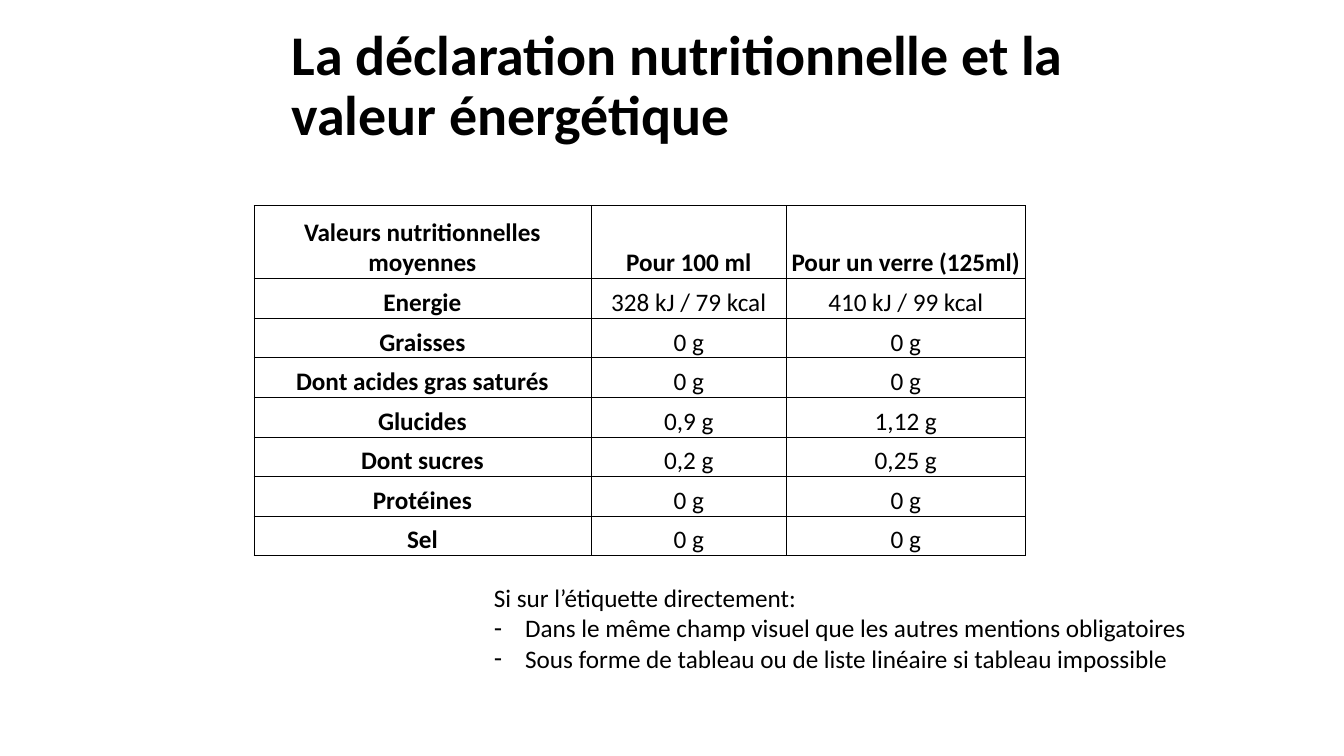
from lxml import etree
from pptx import Presentation
from pptx import util as u
from pptx.dml import color
from pptx.enum import text
from pptx.oxml import ns

INK = "000000"
FONT = "Calibri"
NUTRITION = [
    ("Valeurs nutritionnelles moyennes", "Pour 100 ml", "Pour un verre (125ml)"),
    ("Energie", "328 kJ / 79 kcal", "410 kJ / 99 kcal"),
    ("Graisses", "0 g", "0 g"),
    ("Dont acides gras saturés", "0 g", "0 g"),
    ("Glucides", "0,9 g", "1,12 g"),
    ("Dont sucres", "0,2 g", "0,25 g"),
    ("Protéines", "0 g", "0 g"),
    ("Sel", "0 g", "0 g"),
]
RULES = [
    "Dans le même champ visuel que les autres mentions obligatoires",
    "Sous forme de tableau ou de liste linéaire si tableau impossible",
]


def paint(target, code):
    """Give a colour format the colour of a hex string."""
    target.rgb = color.RGBColor.from_string(code)


def write(para, words, size, bold=False):
    """Add one formatted run to a paragraph."""
    span = para.add_run()
    span.text = words
    span.font.name = FONT
    span.font.size = u.Pt(size)
    span.font.bold = bold
    paint(span.font.color, INK)


def place(shape, box):
    """Move a shape to a box given in centimetres."""
    shape.left, shape.top, shape.width, shape.height = map(u.Cm, box)


def set_bullet(para, mark=None, indent=0):
    """Set the dash and hanging indent of a paragraph, or clear them."""
    properties = para._p.get_or_add_pPr()
    properties.set("marL", str(u.Cm(indent)))
    properties.set("indent", str(-u.Cm(indent)))
    if mark:
        etree.SubElement(properties, ns.qn("a:buFontTx"))
        etree.SubElement(properties, ns.qn("a:buChar")).set("char", mark)
    else:
        etree.SubElement(properties, ns.qn("a:buNone"))


def set_borders(cell, code, width):
    """Draw the four sides of a table cell."""
    properties = cell._tc.get_or_add_tcPr()
    for side in "LRTB":
        line = etree.SubElement(properties, ns.qn("a:ln" + side))
        line.set("w", str(u.Pt(width)))
        fill = etree.SubElement(line, ns.qn("a:solidFill"))
        etree.SubElement(fill, ns.qn("a:srgbClr")).set("val", code)


def add_title(page, box, words):
    """Fill the title placeholder."""
    title = page.shapes.title
    place(title, box)
    frame = title.text_frame
    frame.auto_size = text.MSO_AUTO_SIZE.NONE
    frame.vertical_anchor = text.MSO_ANCHOR.MIDDLE
    para = frame.paragraphs[0]
    para.alignment = text.PP_ALIGN.LEFT
    para.line_spacing = 0.9
    write(para, words, 40, bold=True)


def add_rules(page, box, lead, rules):
    """Fill the body placeholder with a lead-in and a dashed list."""
    body = page.placeholders[1]
    place(body, box)
    frame = body.text_frame
    frame.auto_size = text.MSO_AUTO_SIZE.NONE
    for index, words in enumerate([lead, *rules]):
        para = frame.add_paragraph() if index else frame.paragraphs[0]
        para.space_before = u.Pt(0)
        if index:
            set_bullet(para, "-", 0.79)
        else:
            set_bullet(para)
        write(para, words, 18)


def add_nutrition_table(page, box, rows):
    """Draw the nutrition table, with bold header row and first column."""
    frame = page.shapes.add_table(len(rows), len(rows[0]), *map(u.Cm, box))
    table = frame.table
    table.first_row = table.horz_banding = False
    for column, share in zip(table.columns, (0.437, 0.254, 0.309)):
        column.width = u.Cm(box[2] * share)
    row_height = 0.997
    for index, row in enumerate(table.rows):
        row.height = u.Cm(row_height if index else box[3] - row_height * (len(rows) - 1))
        for place_in_row, cell in enumerate(row.cells):
            set_borders(cell, INK, 0.5)
            cell.fill.background()
            cell.vertical_anchor = text.MSO_ANCHOR.BOTTOM
            cell.margin_left = cell.margin_right = cell.margin_top = u.Cm(0.03)
            cell.margin_bottom = 0
            para = cell.text_frame.paragraphs[0]
            para.alignment = text.PP_ALIGN.CENTER
            write(para, rows[index][place_in_row], 18, bold=index == 0 or place_in_row == 0)


def main():
    """Build the slide and save it."""
    deck = Presentation()
    deck.slide_width, deck.slide_height = u.Cm(33.87), u.Cm(19.05)
    page = deck.slides.add_slide(deck.slide_layouts[1])
    add_title(page, (7.09, 0.36, 23.72, 3.68),
              "La déclaration nutritionnelle et la valeur énergétique")
    add_rules(page, (12.19, 14.55, 18.97, 3.33), "Si sur l’étiquette directement:", RULES)
    add_nutrition_table(page, (6.4, 5.18, 19.43, 8.82), NUTRITION)
    deck.save("out.pptx")


if __name__ == "__main__":
    main()
